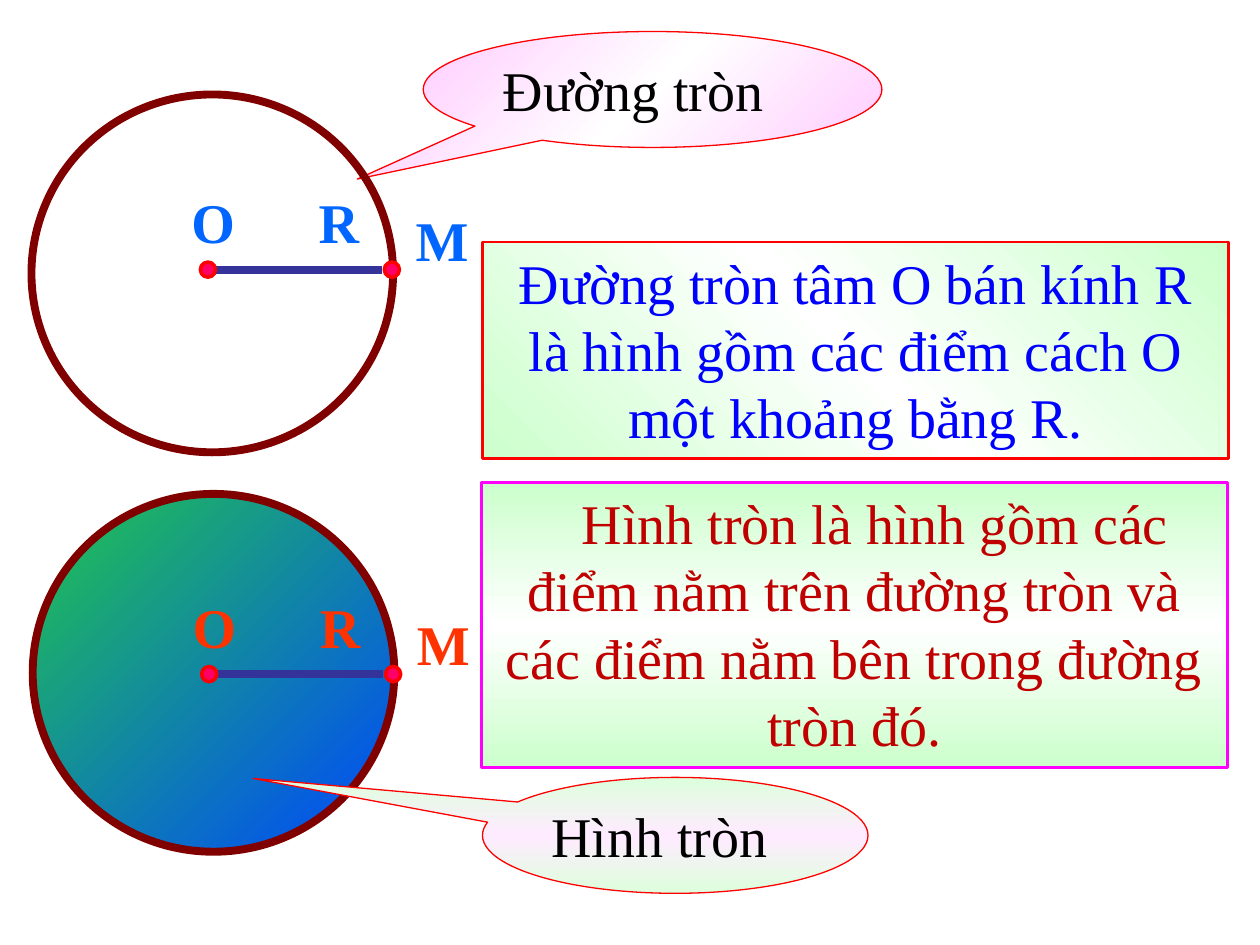
from dataclasses import dataclass

from lxml.etree import SubElement
from pptx import Presentation
from pptx.dml.color import RGBColor
from pptx.enum.shapes import MSO_CONNECTOR, MSO_SHAPE
from pptx.enum.text import MSO_ANCHOR, PP_ALIGN
from pptx.oxml.ns import qn
from pptx.util import Inches, Pt


@dataclass(frozen=True)
class Theme:
    font: str = "Times New Roman"
    size: int = 32
    black: str = "000000"
    red: str = "FF0000"
    magenta: str = "FF00FF"
    maroon: str = "800000"
    navy: str = "333399"
    point: str = "FF0066"
    blue_label: str = "0066FF"
    orange_label: str = "FF3300"
    blue_text: str = "0000FF"
    red_text: str = "C00000"
    pink_white: tuple = ("FFCCFF", "FFFFFF", "FFCCFF")
    mint_pink: tuple = ("DDFFDD", "FFEBFF", "DDFFDD")
    mint_white: tuple = ("CCFFCC", "FFFFFF", "CCFFCC")
    green_blue: tuple = ("22C44C", "0047FF")
    hairline: float = 0.75
    frame: float = 1.5
    dot: float = 2
    heavy: float = 4.5


THEME = Theme()


def rgb(value):
    return RGBColor.from_string(value)


def fill_gradient(shape, colors, angle):
    shape.fill.gradient()
    gradient = shape._element.spPr.find(qn("a:gradFill"))
    stops = gradient.find(qn("a:gsLst"))
    for stop in list(stops):
        stops.remove(stop)
    for index, color in enumerate(colors):
        position = 100000 * index // (len(colors) - 1)
        stop = SubElement(stops, qn("a:gs"), pos=str(position))
        SubElement(stop, qn("a:srgbClr"), val=color)
    gradient.find(qn("a:lin")).set("ang", str(angle * 60000))


def add_outlined(slide, kind, box, line_color, line_width):
    shape = slide.shapes.add_shape(kind, *map(Inches, box))
    shape.shadow.inherit = False
    shape.line.color.rgb = rgb(line_color)
    shape.line.width = Pt(line_width)
    return shape


def write(shape, text, color, align=PP_ALIGN.LEFT, bold=False):
    shape.text_frame.word_wrap = True
    paragraph = shape.text_frame.paragraphs[0]
    paragraph.text = text
    paragraph.alignment = align
    paragraph.font.name = THEME.font
    paragraph.font.size = Pt(THEME.size)
    paragraph.font.bold = bold
    paragraph.font.color.rgb = rgb(color)
    return paragraph


def add_callout(slide, box, text, tip, colors, angle):
    callout = add_outlined(slide, MSO_SHAPE.OVAL_CALLOUT, box, THEME.red, THEME.hairline)
    callout.adjustments[0], callout.adjustments[1] = tip
    fill_gradient(callout, colors, angle)
    callout.text_frame.vertical_anchor = MSO_ANCHOR.MIDDLE
    write(callout, text, THEME.black)


def add_definition(slide, box, text, color, border, angle, indent=0):
    definition = add_outlined(slide, MSO_SHAPE.RECTANGLE, box, border, THEME.frame)
    fill_gradient(definition, THEME.mint_white, angle)
    definition.text_frame.vertical_anchor = MSO_ANCHOR.TOP
    paragraph = write(definition, text, color, PP_ALIGN.CENTER)
    if indent:
        paragraph._p.get_or_add_pPr().set("indent", str(Inches(indent)))


def add_circle(slide, box, colors=None):
    circle = add_outlined(slide, MSO_SHAPE.OVAL, box, THEME.maroon, THEME.heavy)
    if colors:
        fill_gradient(circle, colors, 45)
    else:
        circle.fill.background()


def add_label(slide, box, text, color):
    label = slide.shapes.add_textbox(*map(Inches, box))
    return write(label, text, color, bold=True)


def add_radius(slide, left, top, color):
    line_y = Inches(top + 0.7)
    radius = slide.shapes.add_connector(
        MSO_CONNECTOR.STRAIGHT, Inches(left + 0.23), line_y, Inches(left + 1.61), line_y)
    radius.line.color.rgb = rgb(THEME.navy)
    radius.line.width = Pt(THEME.heavy)
    SubElement(radius._element.spPr, qn("a:effectLst"))

    center_label = add_label(slide, (left, top, 1.55, 0.64), "O\tR", color)
    tabs = SubElement(center_label._p.get_or_add_pPr(), qn("a:tabLst"))
    SubElement(tabs, qn("a:tab"), pos=str(Inches(1.01)), algn="l")
    add_label(slide, (left + 1.78, top + 0.14, 0.63, 0.64), "M", color)

    for offset in (0.17, 1.63):
        dot = add_outlined(slide, MSO_SHAPE.OVAL, (left + offset, top + 0.64, 0.12, 0.12),
                           THEME.red, THEME.dot)
        dot.fill.solid()
        dot.fill.fore_color.rgb = rgb(THEME.point)


def main():
    deck = Presentation()
    deck.slide_width, deck.slide_height = Inches(10), Inches(7.5)
    slide = deck.slides.add_slide(deck.slide_layouts[6])

    add_callout(slide, (3.36, 0.25, 3.64, 0.92), "Đường tròn", (-0.644, 0.773),
                THEME.pink_white, 45)
    add_circle(slide, (0.26, 3.92, 2.87, 2.84), THEME.green_blue)
    add_callout(slide, (3.83, 6.17, 3.06, 0.92), "Hình tròn", (-1.095, -0.491),
                THEME.mint_pink, 90)
    add_definition(slide, (3.83, 1.92, 5.92, 1.72),
                   "Đường tròn tâm O bán kính R là hình gồm các điểm cách O "
                   "một khoảng bằng R.",
                   THEME.blue_text, THEME.red, 315)
    add_radius(slide, 1.43, 4.65, THEME.orange_label)
    add_definition(slide, (3.82, 3.83, 5.92, 2.26),
                   "Hình tròn là hình gồm các điểm nằm trên đường tròn và "
                   "các điểm nằm bên trong đường tròn đó.",
                   THEME.red_text, THEME.magenta, 90, indent=0.33)
    add_circle(slide, (0.25, 0.75, 2.87, 2.84))
    add_radius(slide, 1.42, 1.44, THEME.blue_label)

    deck.save("out.pptx")


if __name__ == "__main__":
    main()
